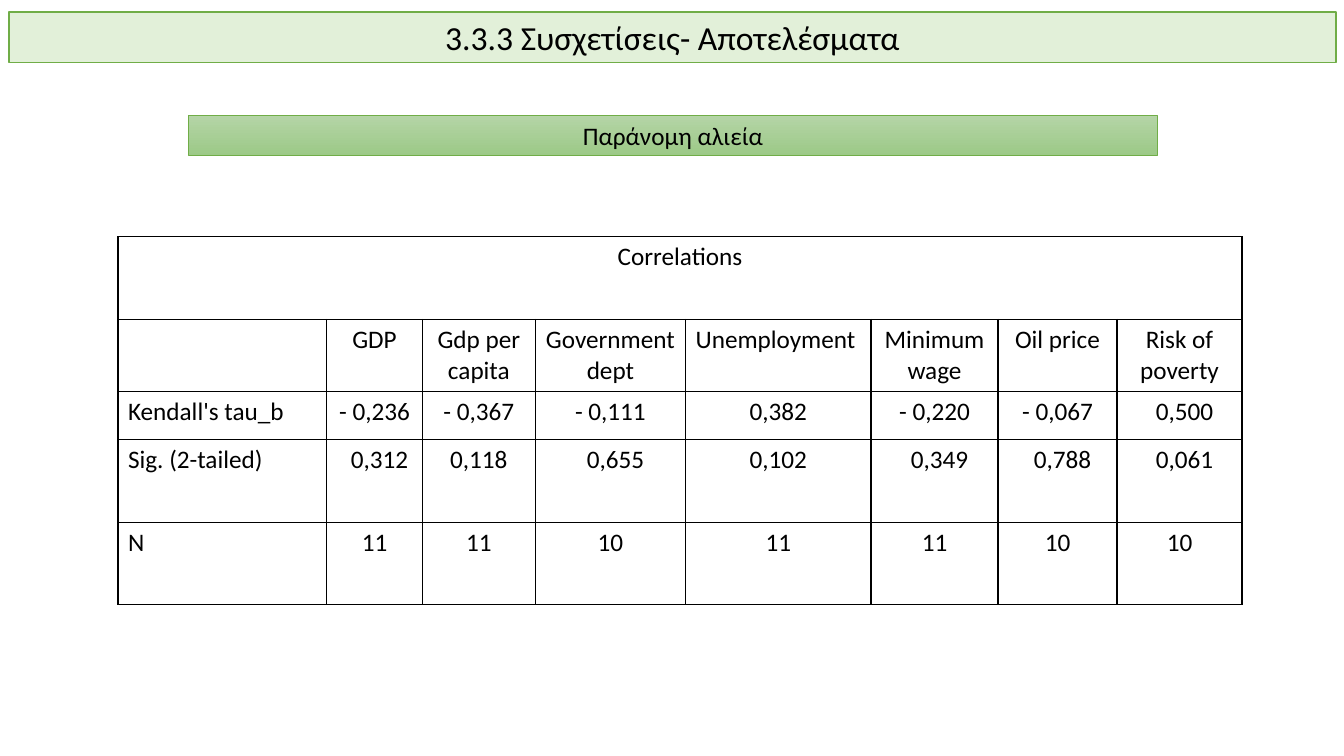
import dataclasses

import lxml.etree
import pptx
import pptx.dml.color
import pptx.enum.shapes
import pptx.enum.text
import pptx.oxml.ns
import pptx.util

Inches = pptx.util.Inches
Pt = pptx.util.Pt
RGB = pptx.dml.color.RGBColor.from_string
PP_ALIGN = pptx.enum.text.PP_ALIGN
ANCHOR = pptx.enum.text.MSO_ANCHOR
qn = pptx.oxml.ns.qn


@dataclasses.dataclass(frozen=True)
class Theme:
    font: str = "Calibri"
    ink: str = "000000"
    green: str = "70AD47"
    pale_green: str = "E2F0D9"
    band_top: str = "B5D5A7"
    band_bottom: str = "9CC987"
    title_size: int = 24
    body_size: int = 18


theme = Theme()


def format_text(frame, size, alignment):
    for paragraph in frame.paragraphs:
        paragraph.alignment = alignment
        paragraph.font.name = theme.font
        paragraph.font.size = Pt(size)
        paragraph.font.color.rgb = RGB(theme.ink)


def add_borders(cell):
    properties = cell._tc.get_or_add_tcPr()
    for side in ("lnL", "lnR", "lnT", "lnB"):
        border = lxml.etree.SubElement(properties, qn(f"a:{side}"), w=str(Pt(1)))
        fill = lxml.etree.SubElement(border, qn("a:solidFill"))
        lxml.etree.SubElement(fill, qn("a:srgbClr"), val=theme.ink)


deck = pptx.Presentation()
deck.slide_width = Inches(13.33)
deck.slide_height = Inches(7.5)
slide = deck.slides.add_slide(deck.slide_layouts[5])

# Title bar
title = slide.shapes.title
title.left, title.top = Inches(0.09), Inches(0.12)
title.width, title.height = Inches(13.16), Inches(0.5)
title.fill.solid()
title.fill.fore_color.rgb = RGB(theme.pale_green)
title.line.color.rgb = RGB(theme.green)
title.line.width = Pt(1)
title.text_frame.text = "3.3.3 Συσχετίσεις- Αποτελέσματα"
title.text_frame.vertical_anchor = ANCHOR.MIDDLE
format_text(title.text_frame, theme.title_size, PP_ALIGN.CENTER)

# Topic band
topic = slide.shapes.add_shape(
    pptx.enum.shapes.MSO_SHAPE.RECTANGLE,
    Inches(1.87), Inches(1.14), Inches(9.61), Inches(0.4))
topic.shadow.inherit = False
topic.fill.gradient()
topic.fill.gradient_angle = 270
for stop, color in zip(topic.fill.gradient_stops, (theme.band_top, theme.band_bottom)):
    stop.color.rgb = RGB(color)
topic.line.color.rgb = RGB(theme.green)
topic.line.width = Pt(0.5)
topic.text_frame.text = "Παράνομη αλιεία"
topic.text_frame.vertical_anchor = ANCHOR.MIDDLE
format_text(topic.text_frame, theme.body_size, PP_ALIGN.CENTER)

# Correlation table
column_widths = (2.07, 0.95, 1.12, 1.49, 1.84, 1.26, 1.18, 1.24)
row_heights = (0.82, 0.7, 0.48, 0.82, 0.82)
rows = (
    ("Correlations",) + ("",) * 7,
    ("", "GDP", "Gdp per\ncapita", "Government\ndept", "Unemployment",
     "Minimum\nwage", "Oil price", "Risk of poverty"),
    ("Kendall's tau_b", "- 0,236", "- 0,367", "- 0,111", "0,382",
     "- 0,220", "- 0,067", "0,500"),
    ("Sig. (2-tailed)", "0,312", "0,118", "0,655", "0,102",
     "0,349", "0,788", "0,061"),
    ("Ν", "11", "11", "10", "11", "11", "10", "10"),
)
indented_values = ("0,500", "0,312", "0,655", "0,349", "0,788", "0,061")

correlations = slide.shapes.add_table(
    len(rows), len(column_widths), Inches(1.17), Inches(2.35),
    Inches(sum(column_widths)), Inches(sum(row_heights))).table
correlations.first_row = False
correlations.horz_banding = False
for column, width in zip(correlations.columns, column_widths):
    column.width = Inches(width)
for row, height in zip(correlations.rows, row_heights):
    row.height = Inches(height)

for row_index, row_texts in enumerate(rows):
    for column_index, text in enumerate(row_texts):
        cell = correlations.cell(row_index, column_index)
        add_borders(cell)
        cell.fill.background()
        cell.text = text
        if text in indented_values:
            cell.margin_left = Inches(0.2)
        left_aligned = text == "Unemployment" or (row_index > 0 and column_index == 0)
        format_text(cell.text_frame, theme.body_size,
                    PP_ALIGN.LEFT if left_aligned else PP_ALIGN.CENTER)
correlations.cell(0, 0).merge(correlations.cell(0, len(column_widths) - 1))

deck.save("out.pptx")
